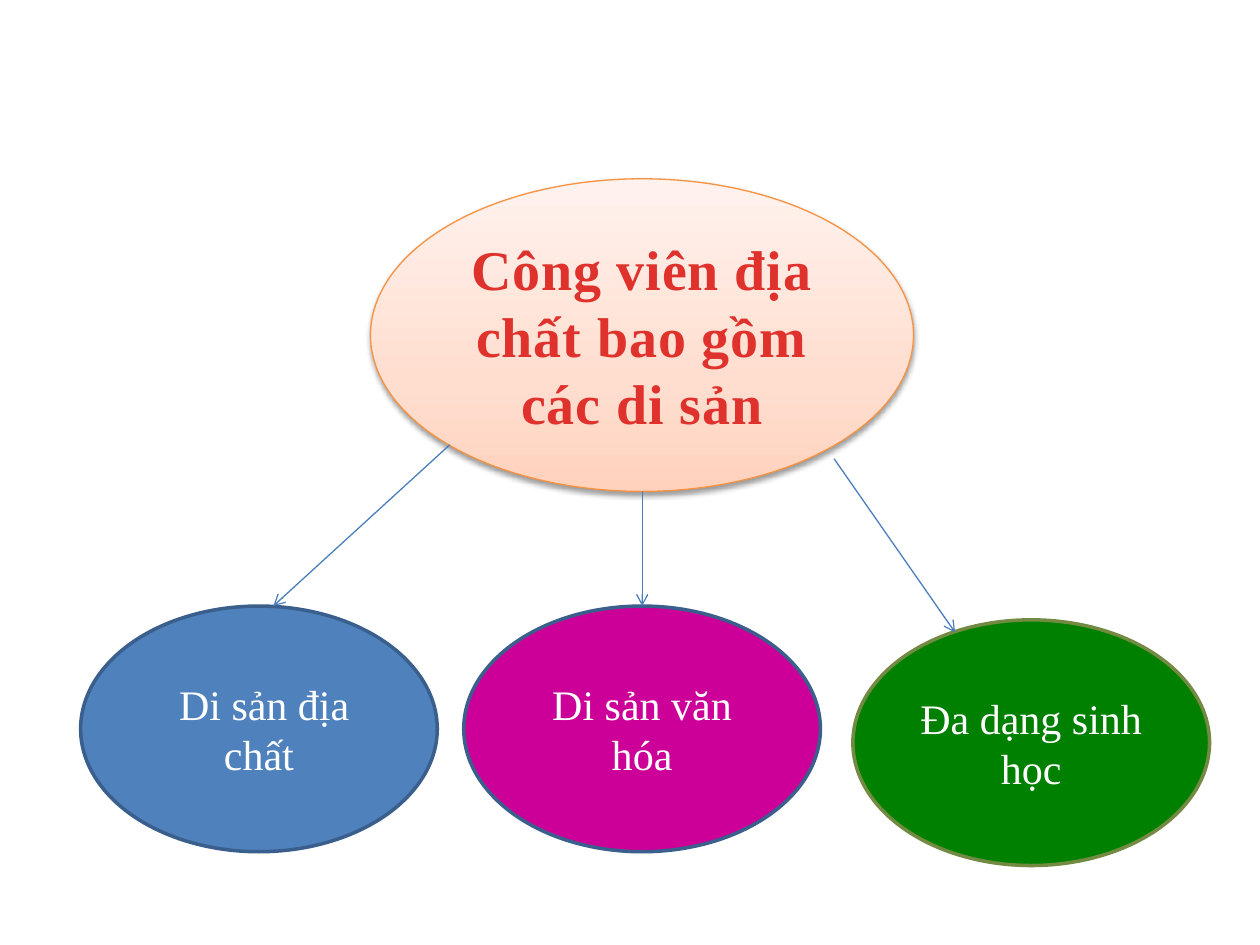
from lxml import etree
from pptx import Presentation
from pptx.dml.color import RGBColor as RGB
from pptx.enum.shapes import MSO_CONNECTOR as Conn, MSO_SHAPE as Kind
from pptx.enum.text import MSO_ANCHOR as Anchor, PP_ALIGN as Align
from pptx.oxml import parse_xml
from pptx.oxml.ns import qn
from pptx.util import Pt

NS = 'xmlns:a="http://schemas.openxmlformats.org/drawingml/2006/main"'


def color(code):
    return RGB.from_string(code)


class Deck:
    font = "Times New Roman"
    link = "4B7EBC"

    def __init__(self, wide, high):
        self.prs = Presentation()
        self.prs.slide_width, self.prs.slide_height = Pt(wide), Pt(high)
        self.slide = self.prs.slides.add_slide(self.prs.slide_layouts[6])

    def oval(self, x, y, w, h, fill, edge, width):
        shape = self.slide.shapes.add_shape(Kind.OVAL, Pt(x), Pt(y), Pt(w), Pt(h))
        shape.shadow.inherit = False
        shape.fill.solid()
        shape.fill.fore_color.rgb = color(fill)
        shape.line.color.rgb = color(edge)
        shape.line.width = Pt(width)
        return shape

    def text(self, shape, words, size, ink, bold=False, before=0, track=0):
        frame = shape.text_frame
        frame.word_wrap = True
        frame.vertical_anchor = Anchor.MIDDLE
        para = frame.paragraphs[0]
        para.alignment = Align.CENTER
        para.space_before = Pt(before)
        run = para.add_run()
        run.text = words
        font = run.font
        font.name, font.size, font.bold = self.font, Pt(size), bold
        font.color.rgb = color(ink)
        if track:
            run._r.get_or_add_rPr().set("spc", str(int(track * 100)))

    def blend(self, shape, stops, angle):
        marks = "".join(
            f'<a:gs pos="{at * 1000}"><a:srgbClr val="{code}"/></a:gs>'
            for at, code in stops)
        props = shape._element.spPr
        props.replace(props.find(qn("a:solidFill")), parse_xml(
            f'<a:gradFill {NS} rotWithShape="1"><a:gsLst>{marks}</a:gsLst>'
            f'<a:lin ang="{angle * 60000}" scaled="0"/></a:gradFill>'))

    def shade(self, shape, blur, dist, alpha):
        shape._element.spPr.find(qn("a:effectLst")).append(parse_xml(
            f'<a:outerShdw {NS} blurRad="{Pt(blur)}" dist="{Pt(dist)}" '
            f'dir="5400000" rotWithShape="0"><a:srgbClr val="000000">'
            f'<a:alpha val="{alpha * 1000}"/></a:srgbClr></a:outerShdw>'))

    def arrow(self, start, end):
        line = self.slide.shapes.add_connector(
            Conn.STRAIGHT, *(Pt(n) for n in (*start, *end)))
        line.line.color.rgb = color(self.link)
        line.line.width = Pt(0.75)
        etree.SubElement(line.line._get_or_add_ln(), qn("a:tailEnd"), type="arrow")
        etree.SubElement(line._element.spPr, qn("a:effectLst"))

    def save(self):
        self.prs.save("out.pptx")


def main():
    deck = Deck(720, 540)

    # Main topic
    hub = deck.oval(211.7, 102.2, 310.3, 178.6, "FFDED0", "F69240", 0.75)
    deck.blend(hub, [(0, "FFD2BD"), (35, "FFDED0"), (100, "FFF2ED")], 270)
    deck.shade(hub, 3.1, 1.6, 38)
    deck.text(hub, "Công viên địa chất bao gồm các di sản", 32, "E0322D",
              bold=True, track=0.5)

    # Kinds of heritage
    for x, y, fill, edge, words in [
        (46.1, 346.3, "4F81BD", "3A5F8C", " Di sản địa chất"),
        (265, 346.3, "CC0099", "3A5F8C", "Di sản văn hóa"),
        (487.4, 354.2, "008000", "738A42", "Đa dạng sinh học"),
    ]:
        leaf = deck.oval(x, y, 203.8, 140.4, fill, edge, 2)
        deck.text(leaf, words, 24, "FFFFFF", before=4.8)

    # Arrows from the topic to each kind
    for start, end in [
        ((257, 254.2), (156.2, 346.3)),
        ((476.6, 262.1), (545.8, 361.4)),
        ((367, 280.8), (367, 346.3)),
    ]:
        deck.arrow(start, end)

    deck.save()


if __name__ == "__main__":
    main()
